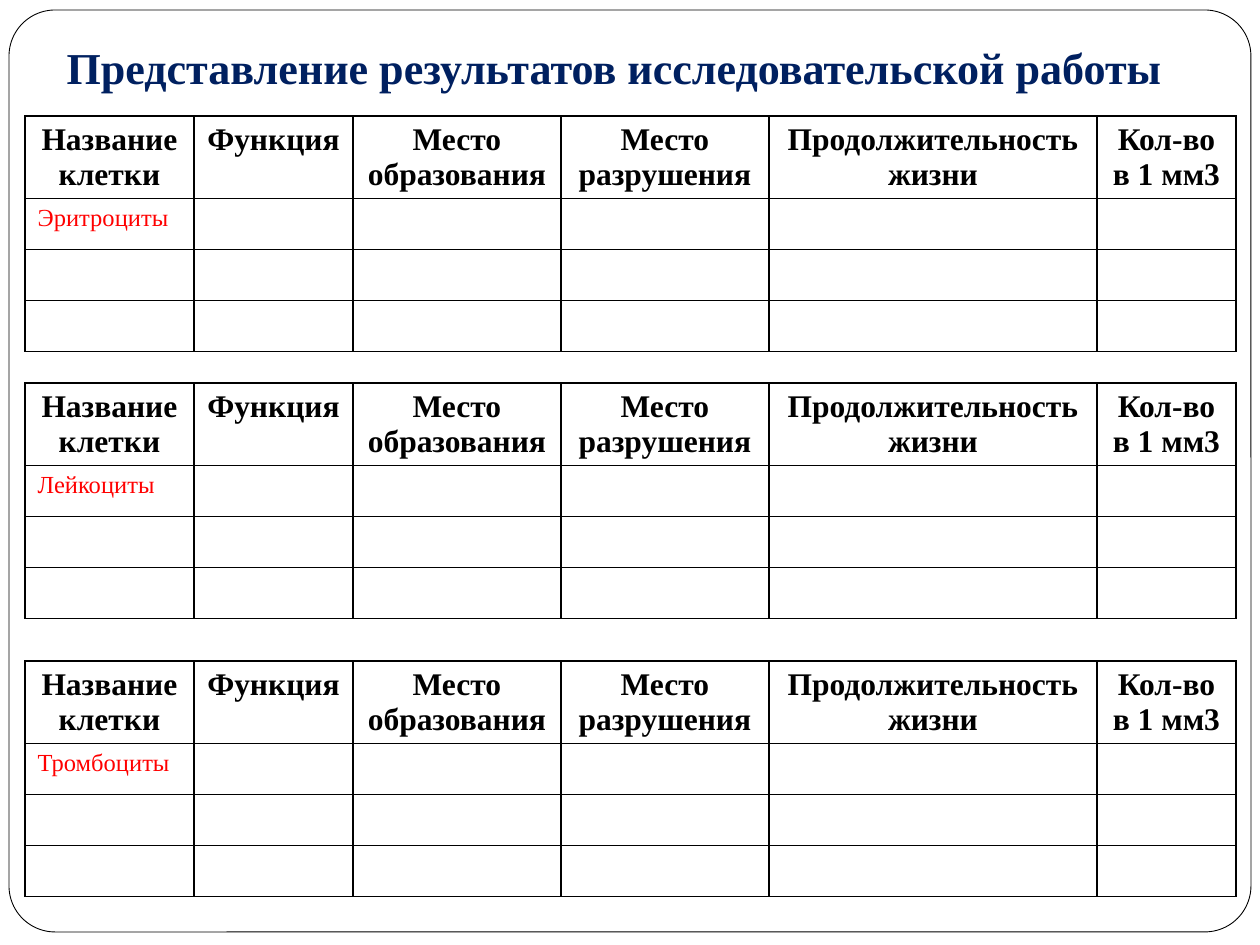
from lxml import etree
from pptx import Presentation
from pptx import util as u
from pptx.dml.color import RGBColor
from pptx.enum import shapes, text
from pptx.oxml.ns import qn

SCALE = 914400 / 126
FACE = "Times New Roman"
HEADS = ["Название клетки", "Функция", "Место образования",
         "Место разрушения", "Продолжительность жизни", "Кол-во в 1 мм3"]
COLS = [169, 159, 208, 208, 328, 139]
ROWS = [82, 51, 51, 51]
TABLES = [("Эритроциты", 116), ("Лейкоциты", 383), ("Тромбоциты", 661)]
HEAD = {"size": u.Pt(18), "bold": True, "name": FACE}
NAME = {"size": u.Pt(14), "bold": False, "name": FACE}
TITLE = {"size": u.Pt(25.2), "bold": True, "name": FACE}


def px(n):
    return u.Emu(round(n * SCALE))


def color(code):
    return RGBColor.from_string(code)


def put(item, values):
    for key, value in values.items():
        setattr(item, key, value)


def write(frame, words, font, code, align):
    para = frame.paragraphs[0]
    para.alignment = align
    run = para.add_run()
    run.text = words
    put(run.font, font)
    run.font.color.rgb = color(code)


def border(cell, code="000000", width=1):
    """Draw a line on all four sides of a cell."""
    props = cell._tc.get_or_add_tcPr()
    for spot, side in enumerate(("lnL", "lnR", "lnT", "lnB")):
        line = etree.Element(qn("a:" + side), w=str(u.Pt(width)))
        fill = etree.SubElement(line, qn("a:solidFill"))
        etree.SubElement(fill, qn("a:srgbClr"), val=code)
        props.insert(spot, line)


def add_frame(slide, left, top, width, height):
    """Place the rounded page outline behind everything else."""
    frame = slide.shapes.add_shape(
        shapes.MSO_SHAPE.ROUNDED_RECTANGLE,
        px(left), px(top), px(width), px(height))
    frame.adjustments[0] = 0.05
    frame.shadow.inherit = False
    frame.fill.solid()
    frame.fill.fore_color.rgb = color("FFFFFF")
    frame.line.color.rgb = color("000000")
    frame.line.width = u.Pt(0.5)
    slide.shapes._spTree.insert(2, frame._element)


def add_title(slide, left, top, width, height):
    title = slide.shapes.title
    put(title, {"left": px(left), "top": px(top),
                "width": px(width), "height": px(height)})
    frame = title.text_frame
    put(frame, {"word_wrap": True, "auto_size": text.MSO_AUTO_SIZE.NONE,
                "vertical_anchor": text.MSO_ANCHOR.BOTTOM,
                "margin_bottom": u.Inches(0.1)})
    write(frame, "Представление результатов исследовательской работы",
          TITLE, "002060", text.PP_ALIGN.LEFT)


def add_grid(slide, left, top, name):
    """Place one table for a kind of blood cell."""
    table = slide.shapes.add_table(
        len(ROWS), len(COLS), px(left), px(top),
        px(sum(COLS)), px(sum(ROWS))).table
    put(table, {"first_row": False, "horz_banding": False})
    for col, width in zip(table.columns, COLS):
        col.width = px(width)
    for row, height in zip(table.rows, ROWS):
        row.height = px(height)
    for cell in table.iter_cells():
        cell.fill.background()
        border(cell)
    for cell, words in zip(table.rows[0].cells, HEADS):
        write(cell.text_frame, words, HEAD, "000000", text.PP_ALIGN.CENTER)
    write(table.cell(1, 0).text_frame, name, NAME, "FF0000",
          text.PP_ALIGN.LEFT)


def main():
    deck = Presentation()
    put(deck, {"slide_width": px(1260), "slide_height": px(945)})
    slide = deck.slides.add_slide(deck.slide_layouts[5])
    add_frame(slide, 9, 10, 1242, 922)
    add_title(slide, 54, 38, 1181, 68)
    for name, top in TABLES:
        add_grid(slide, 25, top, name)
    deck.save("out.pptx")


if __name__ == "__main__":
    main()
